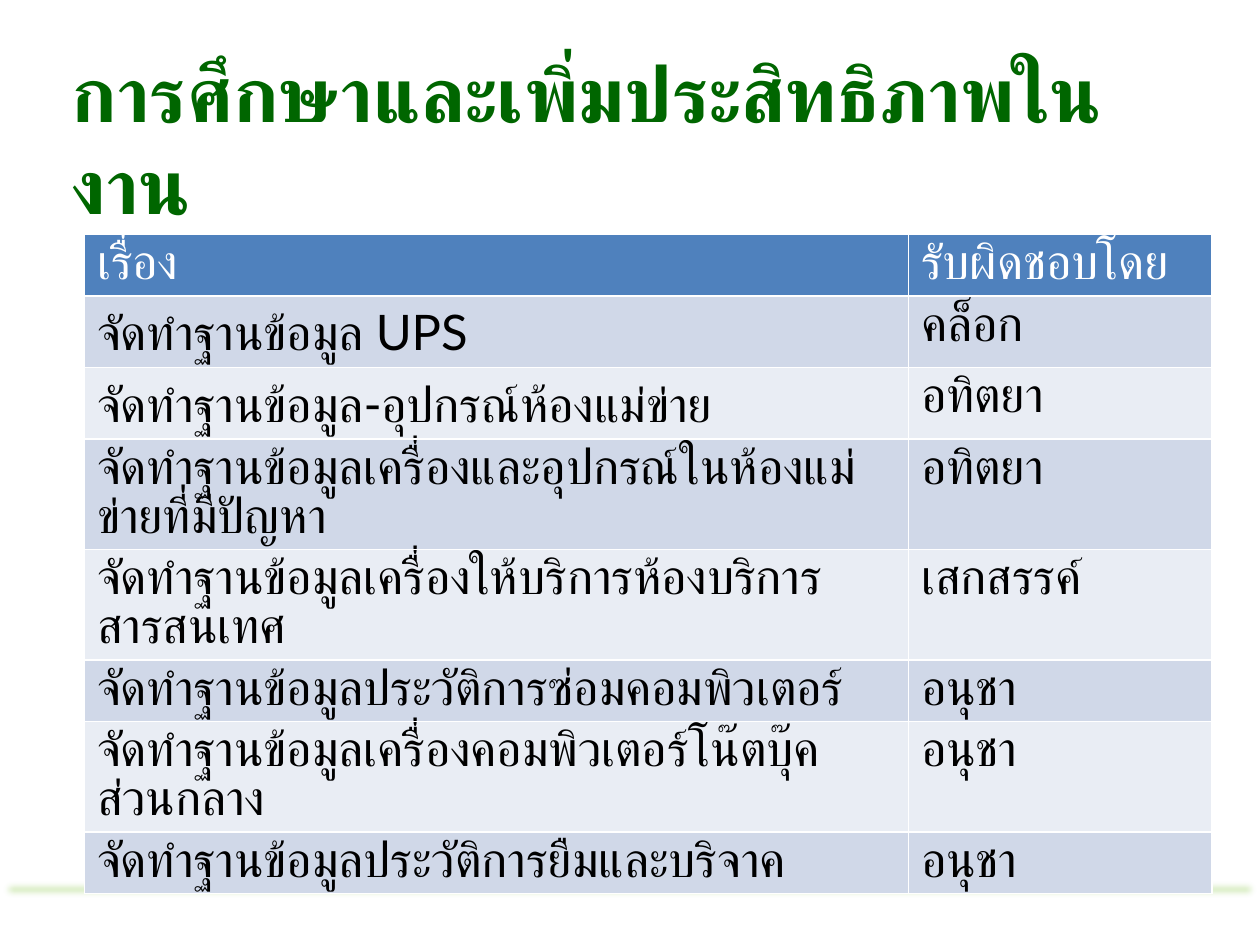
from lxml.etree import SubElement
from pptx import Presentation
from pptx.dml.color import RGBColor
from pptx.enum.lang import MSO_LANGUAGE_ID as Language
from pptx.enum.shapes import MSO_SHAPE as Shape
from pptx.enum.text import MSO_ANCHOR as Anchor, MSO_AUTO_SIZE as AutoSize, PP_ALIGN as Align
from pptx.oxml.ns import qn
from pptx.util import Inches, Pt

FONT = "Lato"
HEADER_FILL = "4F81BD"
BAND_FILLS = ("D0D8E8", "E9EDF4")
COLUMN_WIDTHS = (6.54, 2.41)
ROW_HEIGHT = 0.41
ROWS = [
    ("เรื่อง", "รับผิดชอบโดย"),
    ("จัดทำฐานข้อมูล UPS", "คล็อก"),
    ("จัดทำฐานข้อมูล-อุปกรณ์ห้องแม่ข่าย", "อทิตยา"),
    ("จัดทำฐานข้อมูลเครื่องและอุปกรณ์ในห้องแม่ข่ายที่มีปัญหา", "อทิตยา"),
    ("จัดทำฐานข้อมูลเครื่องให้บริการห้องบริการสารสนเทศ", "เสกสรรค์"),
    ("จัดทำฐานข้อมูลประวัติการซ่อมคอมพิวเตอร์", "อนุชา"),
    ("จัดทำฐานข้อมูลเครื่องคอมพิวเตอร์โน๊ตบุ๊คส่วนกลาง", "อนุชา"),
    ("จัดทำฐานข้อมูลประวัติการยืมและบริจาค", "อนุชา"),
]


def color(hex_string):
    return RGBColor.from_string(hex_string)


def write(frame, text, *, size, fill, bold=False):
    para = frame.paragraphs[0]
    para.alignment = Align.LEFT
    span = para.add_run()
    span.text = text
    font = span.font
    font.name, font.size, font.bold = FONT, Pt(size), bold
    font.language_id = Language.THAI
    font.color.rgb = color(fill)


def add_title(page, text):
    title = page.shapes.title
    title.left, title.top = Inches(0.47), Inches(0.47)
    title.width, title.height = Inches(9.03), Inches(1.25)
    frame = title.text_frame
    frame.vertical_anchor = Anchor.MIDDLE
    frame.auto_size = AutoSize.NONE
    write(frame, text, size=44, fill="006600", bold=True)


def add_soft_bar(page, top, height, fill, radius):
    """Add a full-width bar whose edges fade out over the radius."""
    bar = page.shapes.add_shape(
        Shape.RECTANGLE, 0, Inches(top), Inches(10), Inches(height))
    bar.shadow.inherit = False
    bar.fill.solid()
    bar.fill.fore_color.rgb = color(fill)
    bar.line.fill.background()
    effects = bar.element.spPr.find(qn("a:effectLst"))
    SubElement(effects, qn("a:softEdge"), rad=str(Pt(radius)))


def add_task_table(page, left, top):
    table = page.shapes.add_table(
        len(ROWS), len(COLUMN_WIDTHS), Inches(left), Inches(top),
        Inches(sum(COLUMN_WIDTHS)), Inches(ROW_HEIGHT * len(ROWS))).table
    for column, width in zip(table.columns, COLUMN_WIDTHS):
        column.width = Inches(width)
    for index, texts in enumerate(ROWS):
        is_header = index == 0
        table.rows[index].height = Inches(ROW_HEIGHT)
        for cell, text in zip(table.rows[index].cells, texts):
            cell.fill.solid()
            cell.fill.fore_color.rgb = color(
                HEADER_FILL if is_header else BAND_FILLS[(index - 1) % 2])
            write(cell.text_frame, text, size=28,
                  fill="FFFFFF" if is_header else "000000")


def main():
    deck = Presentation()
    deck.slide_width, deck.slide_height = Inches(10), Inches(7.5)
    page = deck.slides.add_slide(deck.slide_layouts[5])
    add_soft_bar(page, 6.98, 0.16, "7EC234", radius=5)
    add_title(page, "การศึกษาและเพิ่มประสิทธิภาพในงาน")
    add_task_table(page, 0.67, 1.86)
    deck.save("out.pptx")


if __name__ == "__main__":
    main()
